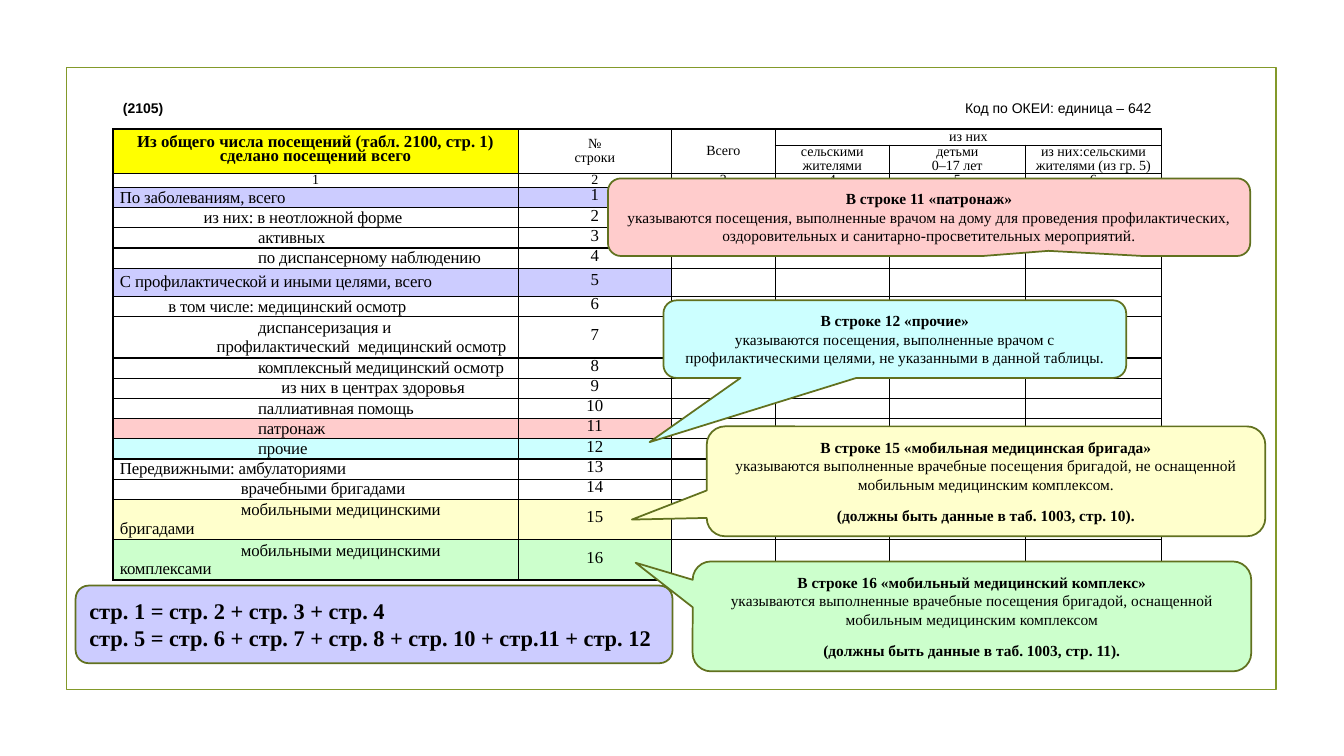
from lxml import etree
from pptx import Presentation
from pptx.dml.color import RGBColor
from pptx.enum.shapes import MSO_SHAPE
from pptx.enum.text import MSO_ANCHOR, PP_ALIGN
from pptx.oxml.ns import qn
from pptx.util import Inches, Pt

BLACK = RGBColor(0, 0, 0)
OLIVE = RGBColor(0x83, 0x99, 0x2A)
DARK_OLIVE = RGBColor(0x61, 0x71, 0x1F)
YELLOW = RGBColor(0xFF, 0xFF, 0)
LILAC = RGBColor(0xCC, 0xCC, 0xFF)
PINK = RGBColor(0xFF, 0xCC, 0xCC)
CYAN = RGBColor(0xCC, 0xFF, 0xFF)
CREAM = RGBColor(0xFF, 0xFF, 0xCC)
GREEN = RGBColor(0xCC, 0xFF, 0xCC)
SERIF = "Times New Roman"

FORM_CODE = "(2105)"
UNIT_CODE = "Код по ОКЕИ: единица – 642"
COLUMNS = [4.02, 1.52, 1.03, 1.13, 1.35, 1.35]
HEADER_HEIGHTS = [0.16, 0.28, 0.14]
# row, column, last row, last column, text
HEADERS = [
    (0, 0, 1, 0, "Из общего числа посещений (табл. 2100, стр. 1)\vсделано посещений всего"),
    (0, 1, 1, 1, "№\vстроки"),
    (0, 2, 1, 2, "Всего"),
    (0, 3, 0, 5, "из них"),
    (1, 3, 1, 3, "сельскими жителями"),
    (1, 4, 1, 4, "детьми\v0–17 лет"),
    (1, 5, 1, 5, "из них:сельскими жителями (из гр. 5)"),
]
# height, fill, lines of (first-line indent, text)
ROWS = [
    (0.2, LILAC, [(0, "По заболеваниям, всего")]),
    (0.2, None, [(0.83, "из них: в неотложной форме")]),
    (0.2, None, [(1.37, "активных")]),
    (0.2, None, [(1.37, "по диспансерному наблюдению")]),
    (0.28, LILAC, [(0, "С профилактической и иными целями, всего")]),
    (0.2, None, [(0.48, "в том числе: медицинский осмотр")]),
    (0.41, None, [(1.37, "диспансеризация и"),
                  (0.96, "профилактический  медицинский осмотр")]),
    (0.2, None, [(1.37, "комплексный медицинский осмотр")]),
    (0.2, None, [(1.6, "из них в центрах здоровья")]),
    (0.2, None, [(1.37, "паллиативная помощь")]),
    (0.2, PINK, [(1.37, "патронаж")]),
    (0.2, CYAN, [(1.37, "прочие")]),
    (0.2, None, [(0, "Передвижными: амбулаториями")]),
    (0.2, None, [(1.2, "врачебными бригадами")]),
    (0.4, CREAM, [(1.2, "мобильными медицинскими бригадами")]),
    (0.4, GREEN, [(1.2, "мобильными медицинскими комплексами")]),
]
# box, tail position, fill, heading, body lines, closing note
CALLOUTS = [
    ((6.03, 1.77, 6.37, 0.77), (0.186, 0.434), PINK, "В строке 11 «патронаж»",
     ["указываются посещения, выполненные врачом на дому для проведения "
      "профилактических, оздоровительных и санитарно-просветительных мероприятий."], None),
    ((6.58, 2.98, 4.59, 0.77), (-0.53, 1.327), CYAN, "В строке 12 «прочие»",
     ["указываются посещения, выполненные врачом с",
      "профилактическими целями, не указанными в данной таблицы."], None),
    ((7.01, 4.23, 5.54, 1.09), (-0.634, 0.348), CREAM,
     "В строке 15 «мобильная медицинская бригада»",
     ["указываются выполненные врачебные посещения бригадой, не оснащенной "
      "мобильным медицинским комплексом."],
     "(должны быть данные в таб. 1003, стр. 10)."),
    ((6.87, 5.57, 5.54, 1.09), (-0.602, -0.488), GREEN,
     "В строке 16 «мобильный медицинский комплекс»",
     ["указываются выполненные врачебные посещения бригадой, оснащенной "
      "мобильным медицинским комплексом"],
     "(должны быть данные в таб. 1003, стр. 11)."),
]
CHECKS = ["стр. 1 = стр. 2 + стр. 3 + стр. 4",
          "стр. 5 = стр. 6 + стр. 7 + стр. 8 + стр. 10 + стр.11 + стр. 12"]


def set_font(p, size, bold=False, name=SERIF):
    p.font.name, p.font.size, p.font.bold = name, Pt(size), bold
    p.font.color.rgb = BLACK


def add_paragraph(tf, text, size, bold=False, align=PP_ALIGN.LEFT):
    """Fill the first paragraph if it is still empty, otherwise append one."""
    p = tf.paragraphs[0] if not tf.text else tf.add_paragraph()
    p.text = text
    p.alignment = align
    set_font(p, size, bold)
    return p


def add_panel(s, kind, box, fill, line):
    sp = s.shapes.add_shape(kind, *map(Inches, box))
    sp.shadow.inherit = False
    if fill is None:
        sp.fill.background()
    else:
        sp.fill.solid()
        sp.fill.fore_color.rgb = fill
    sp.line.color.rgb = line
    sp.line.width = Pt(1.25)
    sp.text_frame.word_wrap = True
    sp.text_frame.vertical_anchor = MSO_ANCHOR.MIDDLE
    return sp


def format_cell(cell):
    """Plain cell: narrow margins, no fill, thin black borders."""
    cell.margin_left = cell.margin_right = Inches(0.07)
    cell.margin_top = cell.margin_bottom = 0
    cell.vertical_anchor = MSO_ANCHOR.MIDDLE
    tcPr = cell._tc.get_or_add_tcPr()
    for side in ("a:lnL", "a:lnR", "a:lnT", "a:lnB"):
        ln = etree.SubElement(tcPr, qn(side), w=str(Pt(1)))
        solid = etree.SubElement(ln, qn("a:solidFill"))
        etree.SubElement(solid, qn("a:srgbClr"), val=str(BLACK))
    cell.fill.background()
    p = cell.text_frame.paragraphs[0]
    etree.SubElement(p._p, qn("a:endParaRPr"), sz="1000")


def fill_cell(cell, color):
    cell.fill.solid()
    cell.fill.fore_color.rgb = color


def add_centred(cell, text, size, bold=False):
    p = add_paragraph(cell.text_frame, text, size, bold, PP_ALIGN.CENTER)
    p.line_spacing = Pt(10)


def add_visits_table(s):
    heights = HEADER_HEIGHTS + [row[0] for row in ROWS]
    frame = s.shapes.add_table(len(heights), len(COLUMNS), Inches(1.12), Inches(1.28),
                               Inches(sum(COLUMNS)), Inches(sum(heights)))
    table = frame.table
    table.first_row = table.horz_banding = False
    for column, width in zip(table.columns, COLUMNS):
        column.width = Inches(width)
    for row, height in zip(table.rows, heights):
        row.height = Inches(height)
    for cell in table.iter_cells():
        format_cell(cell)

    for top, left, bottom, right, text in HEADERS:
        cell = table.cell(top, left)
        if (top, left) != (bottom, right):
            cell.merge(table.cell(bottom, right))
        main = left == 0
        add_centred(cell, text, 12 if main else 10, main)
    fill_cell(table.cell(0, 0), YELLOW)
    for c in range(len(COLUMNS)):
        add_centred(table.cell(2, c), str(c + 1), 10)

    for number, (_, color, lines) in enumerate(ROWS, 1):
        r = number + len(HEADER_HEIGHTS) - 1
        label, index = table.cell(r, 0), table.cell(r, 1)
        for indent, text in lines:
            p = add_paragraph(label.text_frame, text, 12)
            p._p.get_or_add_pPr().set("indent", str(Inches(indent)))
            p.runs[0]._r.get_or_add_rPr().set("spc", "-10")
        add_centred(index, str(number), 12)
        if color is not None:
            fill_cell(label, color)
            fill_cell(index, color)


def add_code_line(s):
    tf = s.shapes.add_textbox(Inches(1.12), Inches(0.94), Inches(10.41), Inches(0.27)).text_frame
    tf.word_wrap = True
    tf.vertical_anchor = MSO_ANCHOR.MIDDLE
    p = tf.paragraphs[0]
    tabs = etree.SubElement(p._p.get_or_add_pPr(), qn("a:tabLst"))
    etree.SubElement(tabs, qn("a:tab"), pos=str(Inches(10.2)), algn="r")
    set_font(p, 10, name="Arial")
    for text, bold in ((FORM_CODE, True), ("\t" + UNIT_CODE, False)):
        r = p.add_run()
        r.text = text
        r.font.bold = bold


def add_callout(s, box, tail, color, heading, body, note):
    sp = add_panel(s, MSO_SHAPE.ROUNDED_RECTANGULAR_CALLOUT, box, color, DARK_OLIVE)
    sp.adjustments[0], sp.adjustments[1] = tail
    tf = sp.text_frame
    add_paragraph(tf, heading, 11, True, PP_ALIGN.CENTER)
    for text in body:
        add_paragraph(tf, text, 11, False, PP_ALIGN.CENTER)
    if note:
        add_paragraph(tf, note, 11, True, PP_ALIGN.CENTER).space_before = Pt(9)


def main():
    prs = Presentation()
    prs.slide_width, prs.slide_height = Inches(13.33), Inches(7.5)
    s = prs.slides.add_slide(prs.slide_layouts[6])
    add_panel(s, MSO_SHAPE.RECTANGLE, (0.66, 0.67, 12, 6.17), None, OLIVE)
    add_code_line(s)
    add_visits_table(s)
    for callout in CALLOUTS:
        add_callout(s, *callout)
    checks = add_panel(s, MSO_SHAPE.ROUNDED_RECTANGLE, (0.75, 5.81, 5.92, 0.77), LILAC, DARK_OLIVE)
    for text in CHECKS:
        add_paragraph(checks.text_frame, text, 16, True)
    prs.save("out.pptx")


if __name__ == "__main__":
    main()
